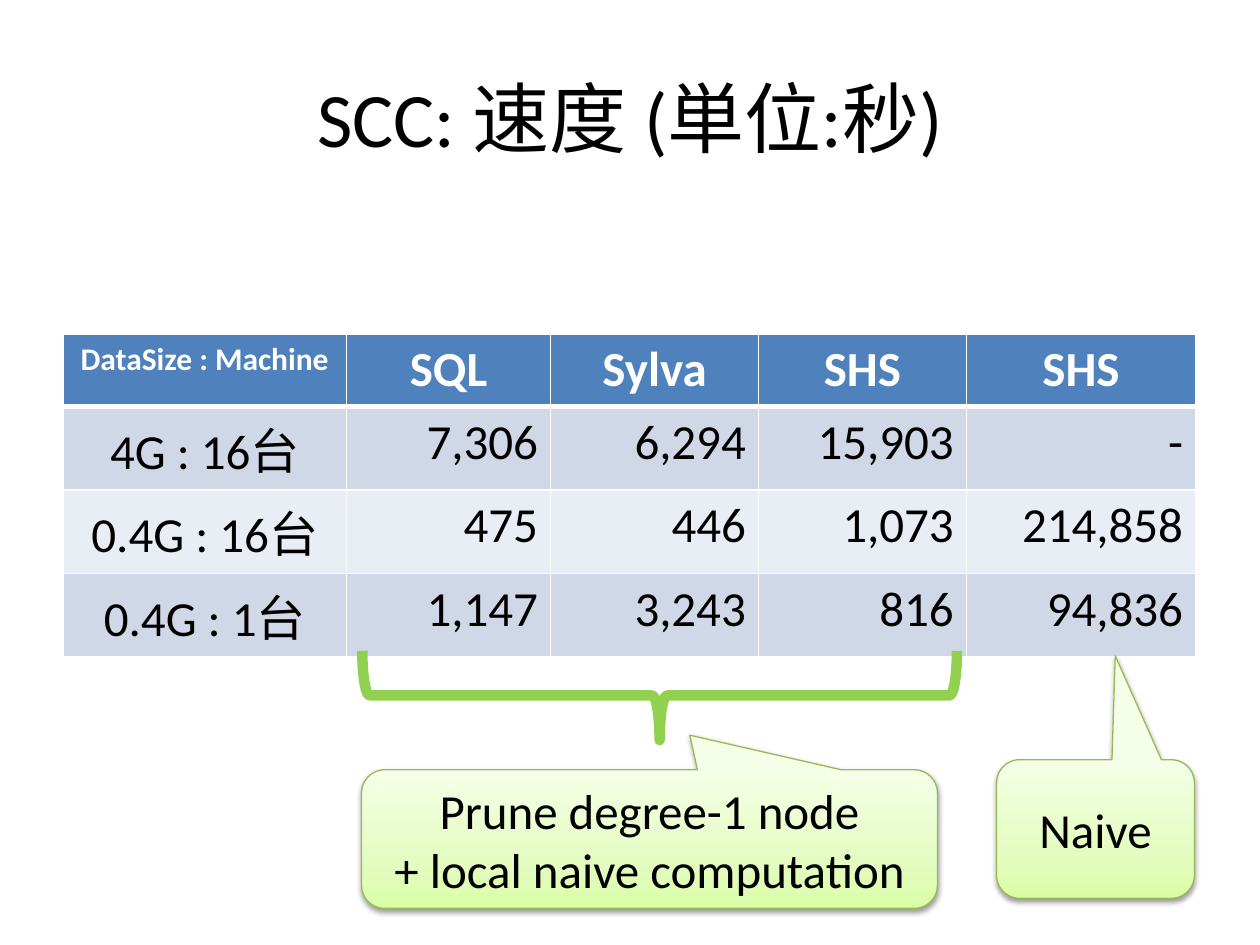
from lxml import etree
from pptx import Presentation
from pptx import util as u
from pptx.dml.color import RGBColor
from pptx.enum import shapes, text
from pptx.oxml import parse_xml
from pptx.oxml.ns import nsdecls, qn

COLUMNS, ROWS = 20, 15  # slide grid, half an inch per step
STEP = u.Inches(0.5)
FONT = "Calibri"
CENTER, RIGHT = text.PP_ALIGN.CENTER, text.PP_ALIGN.RIGHT

HEADINGS = ["DataSize : Machine", "SQL", "Sylva", "SHS", "SHS"]
TIMES = [
    ["4G : 16台", "7,306", "6,294", "15,903", "-"],
    ["0.4G : 16台", "475", "446", "1,073", "214,858"],
    ["0.4G : 1台", "1,147", "3,243", "816", "94,836"],
]
COLUMN_WIDTHS = [4.5, 3.24, 3.3, 3.3, 3.64]
ROW_HEIGHTS = [1.1, 1.16, 1.16, 1.16]


def color(value):
    return RGBColor.from_string(value)


def grid(*steps):
    """Turn grid columns and rows into lengths."""
    return [int(step * STEP) for step in steps]


def write(frame, words, size=28, fill="000000", bold=False, align=CENTER):
    for index, line in enumerate(words.split("\n")):
        para = frame.add_paragraph() if index else frame.paragraphs[0]
        para.alignment = align
        span = para.add_run()
        span.text = line
        span.font.name = FONT
        span.font.size = u.Pt(size)
        span.font.bold = bold
        span.font.color.rgb = color(fill)


def border(cell, **widths):
    """Draw white cell edges; widths are points by edge name."""
    properties = cell._tc.get_or_add_tcPr()
    for index, (edge, points) in enumerate(widths.items()):
        line = parse_xml(
            f'<a:ln{edge} {nsdecls("a")} w="{u.Pt(points)}"><a:solidFill>'
            f'<a:srgbClr val="FFFFFF"/></a:solidFill></a:ln{edge}>')
        properties.insert(index, line)


def add_title(page, box, words):
    title = page.shapes.title
    title.left, title.top, title.width, title.height = grid(*box)
    title.text_frame.vertical_anchor = text.MSO_ANCHOR.MIDDLE
    write(title.text_frame, words, size=44)


def add_times(page, box):
    lines = [HEADINGS] + TIMES
    table = page.shapes.add_table(len(lines), len(HEADINGS), *grid(*box)).table
    for column, width in zip(table.columns, grid(*COLUMN_WIDTHS)):
        column.width = width
    for row, height in zip(table.rows, grid(*ROW_HEIGHTS)):
        row.height = height
    for r, line in enumerate(lines):
        header = r == 0
        band = "4F81BD" if header else ("E9EDF4", "D0D8E8")[r % 2]
        for c, words in enumerate(line):
            cell = table.cell(r, c)
            cell.fill.solid()
            cell.fill.fore_color.rgb = color(band)
            border(cell, L=1, R=1, T=3 if r == 1 else 1, B=3 if header else 1)
            write(cell.text_frame, words,
                  size=18 if header and c == 0 else 28,
                  fill="FFFFFF" if header else "000000", bold=header,
                  align=CENTER if header or c == 0 else RIGHT)


def add_brace(page, box):
    """Place a brace that opens upwards and fills the box."""
    left, top, width, height = grid(*box)
    shift = (width - height) // 2
    brace = page.shapes.add_shape(shapes.MSO_SHAPE.RIGHT_BRACE,
                                  left + shift, top - shift, height, width)
    brace.rotation = 90
    brace.shadow.inherit = False
    brace.fill.background()
    brace.line.color.rgb = color("92D050")
    brace.line.width = u.Pt(6)


def add_callout(page, box, words, tip):
    callout = page.shapes.add_shape(
        shapes.MSO_SHAPE.ROUNDED_RECTANGULAR_CALLOUT, *grid(*box))
    callout.adjustments[0], callout.adjustments[1] = tip
    callout.line.color.rgb = color("98B955")
    callout.line.width = u.Pt(0.75)

    # Three-stop gradient, darkest at the bottom
    callout.fill.gradient()
    callout.fill.gradient_angle = 90
    stops = callout._element.spPr.find(".//" + qn("a:gsLst"))
    for stop in list(stops):
        stops.remove(stop)
    for place, shade in ((0, "DAFDA7"), (35, "E4FCC2"), (100, "F5FFE7")):
        stop = etree.SubElement(stops, qn("a:gs"), pos=str(place * 1000))
        etree.SubElement(stop, qn("a:srgbClr"), val=shade)

    # Soft shadow below
    callout.shadow.inherit = False
    effects = callout._element.spPr.find(qn("a:effectLst"))
    effects.append(parse_xml(
        f'<a:outerShdw {nsdecls("a")} blurRad="{u.Pt(3.1)}" dist="{u.Pt(1.6)}"'
        ' dir="5400000" rotWithShape="0"><a:srgbClr val="000000">'
        '<a:alpha val="38000"/></a:srgbClr></a:outerShdw>'))

    frame = callout.text_frame
    frame.word_wrap = True
    frame.vertical_anchor = text.MSO_ANCHOR.MIDDLE
    write(frame, words)


def main():
    deck = Presentation()
    deck.slide_width, deck.slide_height = grid(COLUMNS, ROWS)
    page = deck.slides.add_slide(deck.slide_layouts[5])
    add_title(page, (1, 0.6, 18, 2.5), "SCC: 速度 (単位:秒)")
    add_times(page, (1, 5.3, 18, 4.6))
    add_brace(page, (5.75, 10.33, 9.44, 1.42))
    add_callout(page, (15.82, 12.06, 3.14, 2.2), "Naive", (0.1, -1.25))
    add_callout(page, (5.74, 12.22, 9.14, 2.2),
                "Prune degree-1 node\n+ local naive computation", (0.07, -0.75))
    deck.save("out.pptx")


if __name__ == "__main__":
    main()
